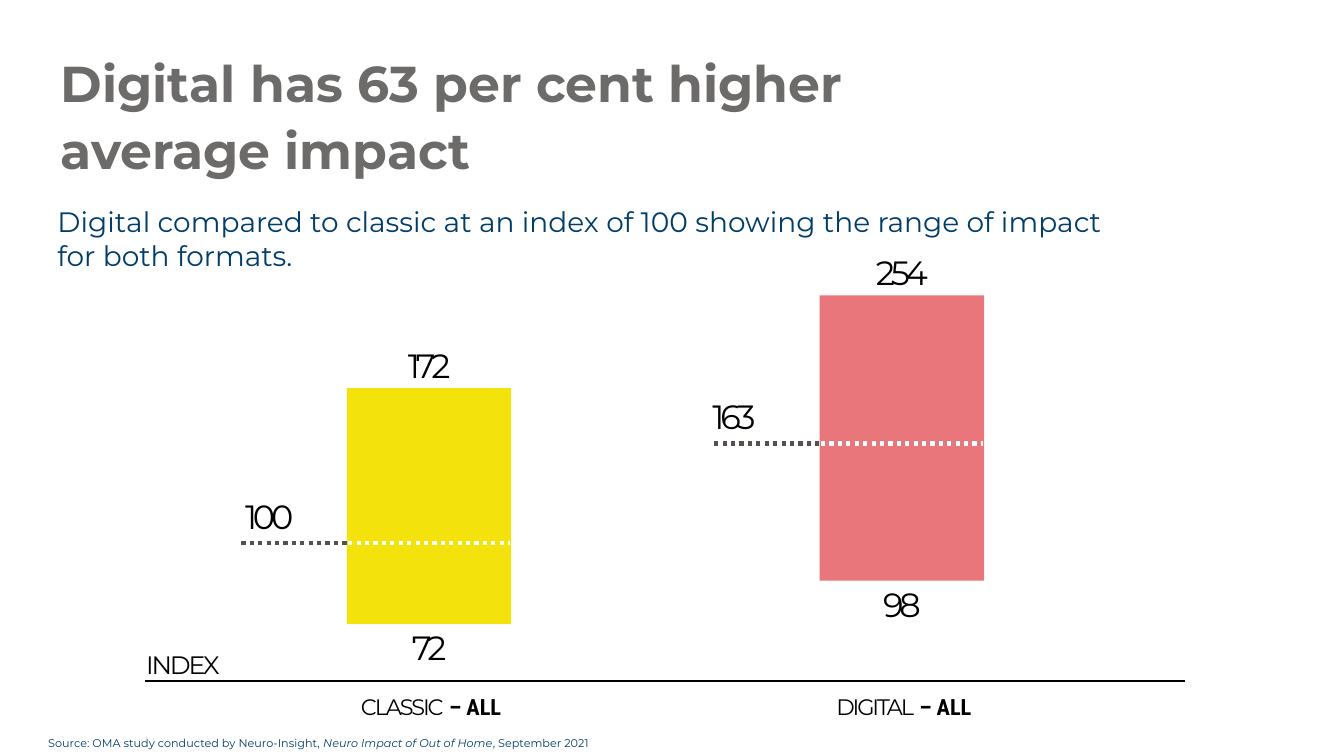
import pptx
import pptx.util
import pptx.dml.color
import pptx.enum.dml
import pptx.enum.shapes
import pptx.enum.text
import pptx.oxml.ns
import lxml.etree

TITLE = "Digital has 63 per cent higher average impact"
SUBTITLE = "Digital compared to classic at an index of 100 showing the range of impact for both formats."
SOURCE = [
    ("Source: OMA study conducted by Neuro-Insight, ", {}),
    ("Neuro Impact of Out of Home", {"italic": True}),
    (", September 2021", {}),
]
AXIS_NAME = "INDEX"
FORMATS = [
    {"name": "CLASSIC", "group": " – ALL", "high": "172", "average": "100", "low": "72",
     "color": "yellow", "left": 25.81, "top": 51.33, "height": 31.2, "average_row": 71.87, "average_shift": 5.78},
    {"name": "DIGITAL", "group": " – ALL", "high": "254", "average": "163", "low": "98",
     "color": "coral", "left": 60.99, "top": 39.07, "height": 37.73, "average_row": 58.67, "average_shift": 6.38},
]
COLORS = {"title": "6C6B6A", "navy": "003D69", "black": "000000", "dots": "55504C",
          "white": "FFFFFF", "yellow": "F3E20B", "coral": "E9767A"}
FONT, BOLD_FONT = "Montserrat", "Roboto Condensed"
WIDTH, HEIGHT = 13.33, 7.5
BAR_WIDTH = 12.23
LABEL_WIDTH, LABEL_HEIGHT = 11.25, 8.4
CATEGORY_WIDTH = 20.78
HIGH_GAP, LOW_GAP, AVERAGE_GAP = 3.07, 3.13, 3.6
DOTS_REACH = 7.85

presentation = pptx.Presentation()
presentation.slide_width = pptx.util.Inches(WIDTH)
presentation.slide_height = pptx.util.Inches(HEIGHT)
slide = presentation.slides.add_slide(presentation.slide_layouts[6])


def across(share):
    return pptx.util.Inches(WIDTH * share / 100)


def down(share):
    return pptx.util.Inches(HEIGHT * share / 100)


def rgb(name):
    return pptx.dml.color.RGBColor.from_string(COLORS[name])


def add_text(left, top, width, height, runs, size, color="black", centered=False, margins=True):
    box = slide.shapes.add_textbox(across(left), down(top), across(width), down(height))
    frame = box.text_frame
    frame.word_wrap = True
    if not margins:
        frame.margin_left = frame.margin_right = frame.margin_top = frame.margin_bottom = 0
    paragraph = frame.paragraphs[0]
    if centered:
        frame.vertical_anchor = pptx.enum.text.MSO_ANCHOR.MIDDLE
        paragraph.alignment = pptx.enum.text.PP_ALIGN.CENTER
    for text, style in runs:
        run = paragraph.add_run()
        run.text = text
        run.font.name = style.get("font", FONT)
        run.font.size = pptx.util.Pt(size)
        run.font.color.rgb = rgb(color)
        run.font.bold = style.get("bold", False)
        run.font.italic = style.get("italic", False)
        if "spacing" in style:
            run.font._element.set("spc", str(style["spacing"]))
    return paragraph


def add_value(center, middle, text):
    add_text(center - LABEL_WIDTH / 2, middle - LABEL_HEIGHT / 2, LABEL_WIDTH, LABEL_HEIGHT,
             [(text, {"spacing": -300})], 24, centered=True)


def add_line(start, end, row, color, weight, dotted=False):
    line = slide.shapes.add_connector(pptx.enum.shapes.MSO_CONNECTOR.STRAIGHT,
                                      across(start), down(row), across(end), down(row))
    line.line.color.rgb = rgb(color)
    line.line.width = pptx.util.Pt(weight)
    if dotted:
        line.line.dash_style = pptx.enum.dml.MSO_LINE.ROUND_DOT
    lxml.etree.SubElement(line._element.spPr, pptx.oxml.ns.qn("a:effectLst"))


def add_format(item):
    left, top = item["left"], item["top"]
    right, bottom = left + BAR_WIDTH, top + item["height"]
    center = (left + right) / 2
    bar = slide.shapes.add_shape(pptx.enum.shapes.MSO_SHAPE.RECTANGLE, across(left), down(top),
                                 across(BAR_WIDTH), down(item["height"]))
    bar.shadow.inherit = False
    bar.fill.solid()
    bar.fill.fore_color.rgb = rgb(item["color"])
    bar.line.fill.background()
    add_value(center, top - HIGH_GAP, item["high"])
    add_value(center, bottom + LOW_GAP, item["low"])
    add_value(left - item["average_shift"], item["average_row"] - AVERAGE_GAP, item["average"])
    add_line(left - DOTS_REACH, left + 0.1, item["average_row"], "dots", 3, True)
    add_line(left + 0.1, right - 0.1, item["average_row"], "white", 3, True)
    add_text(center - CATEGORY_WIDTH / 2 + 0.15, 91.87, CATEGORY_WIDTH, 3.2,
             [(item["name"], {"spacing": -150}), (item["group"], {"font": BOLD_FONT, "bold": True})],
             16, centered=True)


title = add_text(4.5, 6.13, 69.24, 8, [(TITLE, {"bold": True})], 36, "title", margins=False)
title.line_spacing = 1.1
add_text(3.53, 26.4, 81.62, 10.27, [(SUBTITLE, {})], 20, "navy")
add_text(2.85, 96.8, 95.42, 3.2, SOURCE, 8, "navy")
add_line(10.8, 88.15, 90.13, "black", 1.5)
add_text(10.13, 85.2, 13.2, 4.8, [(AXIS_NAME, {"spacing": -150})], 18)
for item in FORMATS:
    add_format(item)

presentation.save("out.pptx")
